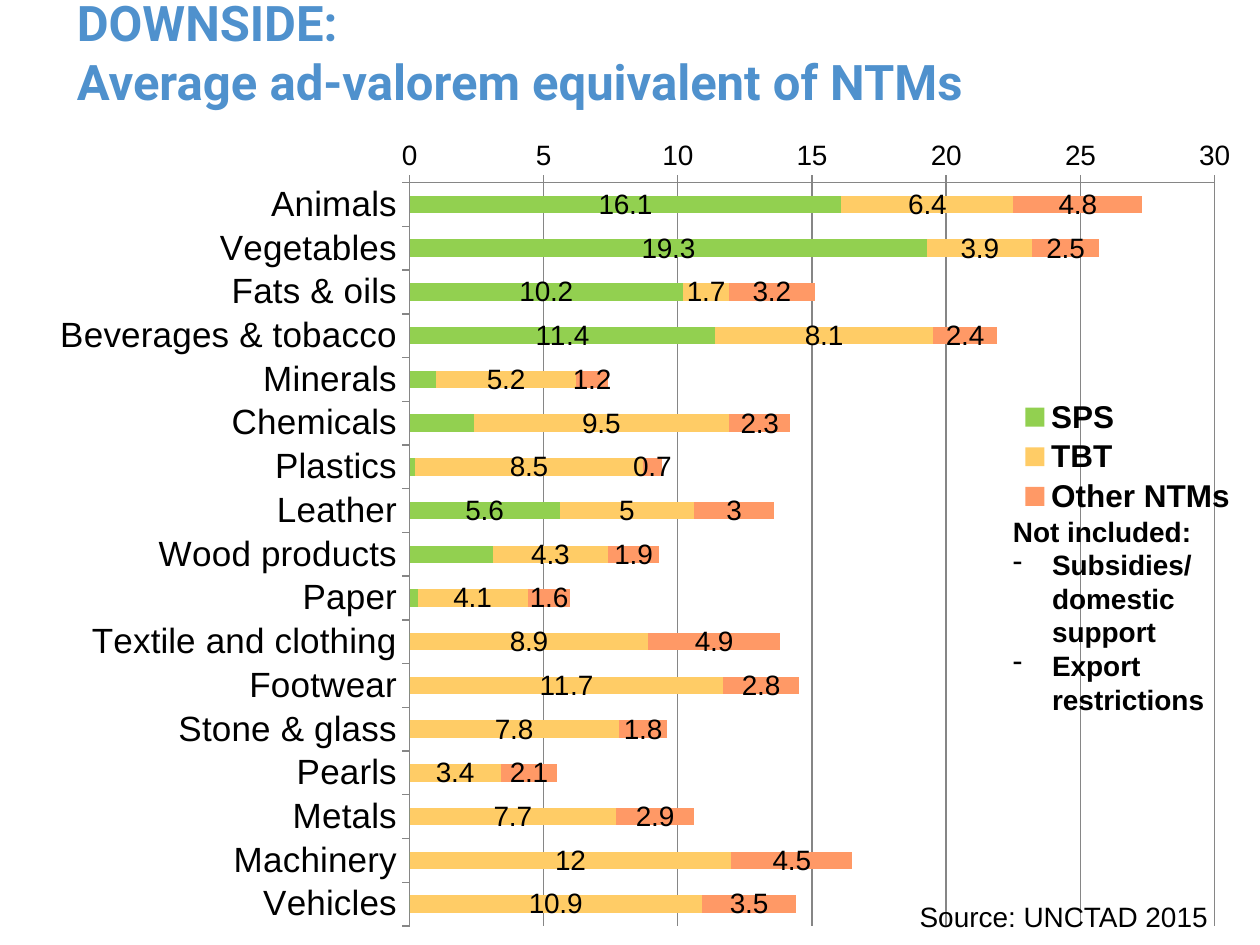
from lxml import etree
from pptx import Presentation
from pptx.chart.data import CategoryChartData
from pptx.dml.color import RGBColor
from pptx.enum.chart import XL_CHART_TYPE, XL_LEGEND_POSITION, XL_TICK_MARK
from pptx.enum.text import MSO_ANCHOR
from pptx.oxml import parse_xml
from pptx.oxml.ns import nsdecls, qn
from pptx.util import Cm, Pt

STACKED = XL_CHART_TYPE.BAR_STACKED
RIGHT = XL_LEGEND_POSITION.RIGHT
OUT = XL_TICK_MARK.OUTSIDE
MIDDLE, TOP = MSO_ANCHOR.MIDDLE, MSO_ANCHOR.TOP
BLUE = RGBColor(0x4F, 0x91, 0xCD)
BLACK = RGBColor(0, 0, 0)
GRAY = RGBColor(0x86, 0x86, 0x86)
GREEN = RGBColor(0x92, 0xD0, 0x50)
YELLOW = RGBColor(0xFF, 0xCC, 0x66)
ORANGE = RGBColor(0xFF, 0x99, 0x66)

TITLE = ["DOWNSIDE: \vAverage ad-valorem equivalent of NTMs"]
NOTE = ["Not included:", "Subsidies/\vdomestic support", "Export restrictions"]
SOURCE = ["Source: UNCTAD 2015"]
ROWS = [
    ("Animals", 16.1, 6.4, 4.8),
    ("Vegetables", 19.3, 3.9, 2.5),
    ("Fats & oils", 10.2, 1.7, 3.2),
    ("Beverages & tobacco", 11.4, 8.1, 2.4),
    ("Minerals", 1, 5.2, 1.2),
    ("Chemicals", 2.4, 9.5, 2.3),
    ("Plastics", 0.2, 8.5, 0.7),
    ("Leather", 5.6, 5, 3),
    ("Wood products", 3.1, 4.3, 1.9),
    ("Paper", 0.3, 4.1, 1.6),
    ("Textile and clothing", 0, 8.9, 4.9),
    ("Footwear", 0, 11.7, 2.8),
    ("Stone & glass", 0, 7.8, 1.8),
    ("Pearls", 0, 3.4, 2.1),
    ("Metals", 0, 7.7, 2.9),
    ("Machinery", 0, 12, 4.5),
    ("Vehicles", 0, 10.9, 3.5),
]
SERIES = [("SPS", GREEN), ("TBT", YELLOW), ("Other NTMs", ORANGE)]
LEAST = 5


def style(font, size, bold=False, name="Arial", color=BLACK):
    font.size, font.bold, font.name = Pt(size), bold, name
    font.color.rgb = color


def add_text(slide, box, lines, size, bold=False, name="Arial",
             color=BLACK, anchor=TOP, wrap=True):
    frame = slide.shapes.add_textbox(*map(Cm, box)).text_frame
    frame.word_wrap = wrap
    frame.vertical_anchor = anchor
    frame.text = "\n".join(lines)
    for para in frame.paragraphs:
        for run in para.runs:
            style(run.font, size, bold, name, color)
    return frame


def add_dash(para):
    props = para._p.get_or_add_pPr()
    props.set("marL", str(Cm(0.79)))
    props.set("indent", str(-Cm(0.79)))
    etree.SubElement(props, qn("a:buFontTx"))
    etree.SubElement(props, qn("a:buChar")).set("char", "-")


def layout(x, y, w, h, inner=False):
    target = '<c:layoutTarget val="inner"/>' if inner else ""
    modes = "".join(f'<c:{m}Mode val="edge"/>' for m in "xy")
    sizes = "".join(f'<c:{k} val="{v}"/>' for k, v in zip("xywh", (x, y, w, h)))
    return parse_xml(f'<c:layout {nsdecls("c")}><c:manualLayout>{target}'
                     f'{modes}{sizes}</c:manualLayout></c:layout>')


def place(parent, new, before):
    for old in parent.findall(qn("c:layout")):
        parent.remove(old)
    parent.find(qn(before)).addprevious(new)


def add_bars(slide, box):
    data = CategoryChartData()
    names, *cols = zip(*ROWS)
    data.categories = names
    for (name, _), vals in zip(SERIES, cols):
        data.add_series(name, vals)
    chart = slide.shapes.add_chart(STACKED, *map(Cm, box), data).chart
    style(chart.font, 10)
    chart.has_title = False

    plot = chart.plots[0]
    plot.gap_width, plot.overlap = 150, 100
    plot.vary_by_categories = False
    for bars, (_, color) in zip(plot.series, SERIES):
        bars.format.fill.solid()
        bars.format.fill.fore_color.rgb = color
        bars.invert_if_negative = False
        labels = bars.data_labels
        labels.show_value = True
        style(labels.font, 16)
    first = plot.series[0]
    small = [i for i, val in enumerate(first.values) if val < LEAST]
    for spot, i in enumerate(small):
        first.data_labels._element.insert(spot, parse_xml(
            f'<c:dLbl {nsdecls("c")}><c:idx val="{i}"/>'
            '<c:delete val="1"/></c:dLbl>'))

    for axis, size in ((chart.category_axis, 20), (chart.value_axis, 16)):
        axis.major_tick_mark = OUT
        axis.format.line.color.rgb = GRAY
        style(axis.tick_labels.font, size)
    chart.category_axis.reverse_order = True
    scale = chart.value_axis
    scale.minimum_scale, scale.maximum_scale, scale.major_unit = 0, 30, 5
    scale.has_major_gridlines = True
    scale.major_gridlines.format.line.color.rgb = GRAY

    chart.has_legend = True
    legend = chart.legend
    legend.position = RIGHT
    legend.include_in_layout = False
    style(legend.font, 18, True)
    place(legend._element, layout(0.8, 0.33, 0.19, 0.15), "c:overlay")
    area = chart._chartSpace.chart.plotArea
    place(area, layout(0.325, 0.071, 0.639, 0.906, True), "c:barChart")


def main():
    deck = Presentation()
    deck.slide_width, deck.slide_height = Cm(25.4), Cm(19.05)
    slide = deck.slides.add_slide(deck.slide_layouts[6])
    add_text(slide, (1.3, 0.13, 24, 1.8), TITLE, 28, True, "Roboto", BLUE, MIDDLE)
    add_bars(slide, (0, 2.51, 25.4, 16.54))
    note = add_text(slide, (20.17, 10.24, 4.8, 4.6), NOTE, 16, True)
    for para in note.paragraphs[1:]:
        add_dash(para)
    add_text(slide, (18.29, 18.01, 6.4, 0.94), SOURCE, 16, wrap=False)
    deck.save("out.pptx")


if __name__ == "__main__":
    main()
